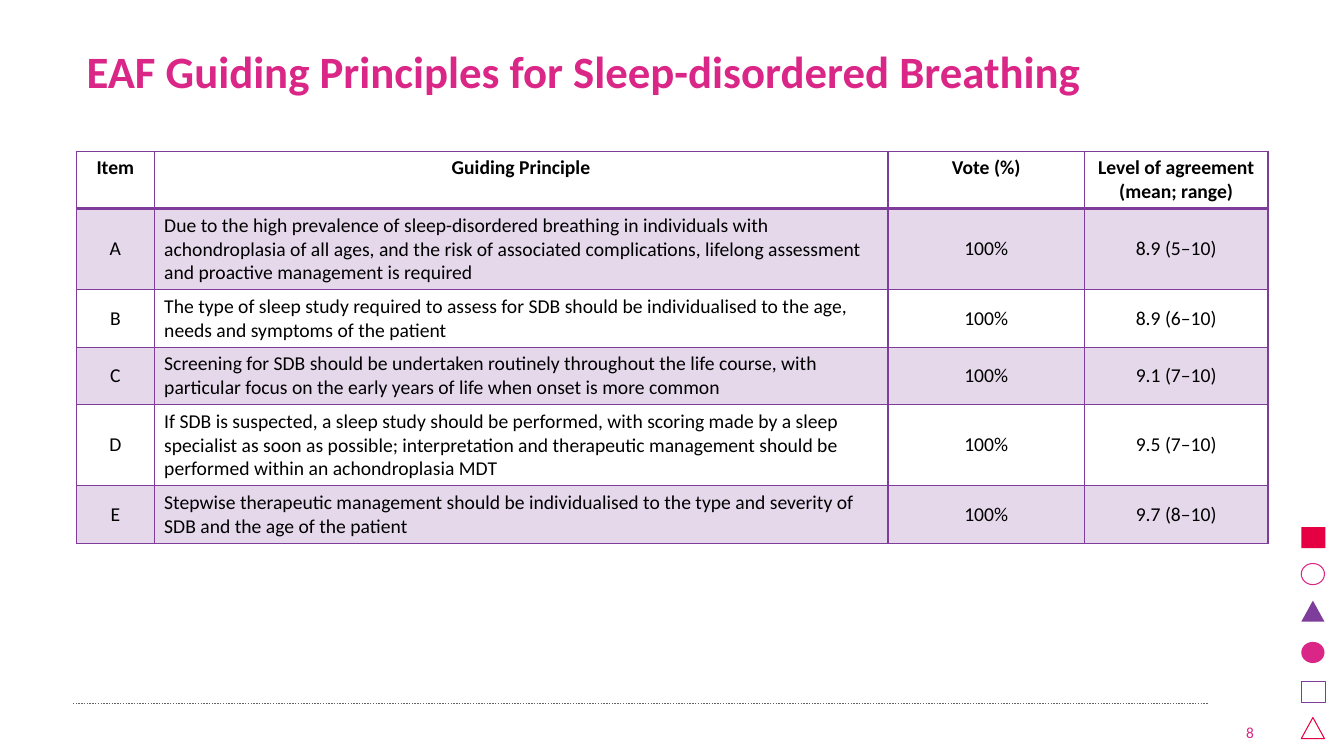
from lxml import etree
from pptx import Presentation
from pptx.dml.color import RGBColor
from pptx.enum.dml import MSO_LINE
from pptx.enum.shapes import MSO_CONNECTOR, MSO_SHAPE
from pptx.enum.text import MSO_ANCHOR, PP_ALIGN
from pptx.oxml.ns import qn
from pptx.util import Pt

LEFT, CENTER, RIGHT = PP_ALIGN.LEFT, PP_ALIGN.CENTER, PP_ALIGN.RIGHT
TOP, MIDDLE, BOTTOM = MSO_ANCHOR.TOP, MSO_ANCHOR.MIDDLE, MSO_ANCHOR.BOTTOM
SQUARE, CIRCLE = MSO_SHAPE.RECTANGLE, MSO_SHAPE.OVAL
TRIANGLE = MSO_SHAPE.ISOSCELES_TRIANGLE
STRAIGHT = MSO_CONNECTOR.STRAIGHT
DOTTED = MSO_LINE.ROUND_DOT

PINK, PURPLE, RED = "DA2686", "7E3C9B", "E50043"
GREY, BLACK = "646464", "000000"

COLUMN_WIDTHS = [55.4, 524.2, 140.4, 131]
ALIGNMENTS = [CENTER, LEFT, CENTER, CENTER]
ROW_HEIGHTS = [41, 58, 41, 41, 58, 41]
HEADER = ["Item", "Guiding Principle", "Vote (%)", "Level of agreement\n(mean; range)"]
PRINCIPLES = [
    ["A", "Due to the high prevalence of sleep-disordered breathing in individuals with "
     "achondroplasia of all ages, and the risk of associated complications, lifelong "
     "assessment and proactive management is required", "100%", "8.9 (5–10)"],
    ["B", "The type of sleep study required to assess for SDB should be individualised "
     "to the age, needs and symptoms of the patient", "100%", "8.9 (6–10)"],
    ["C", "Screening for SDB should be undertaken routinely throughout the life course, "
     "with particular focus on the early years of life when onset is more common",
     "100%", "9.1 (7–10)"],
    ["D", "If SDB is suspected, a sleep study should be performed, with scoring made by "
     "a sleep specialist as soon as possible; interpretation and therapeutic management "
     "should be performed within an achondroplasia MDT", "100%", "9.5 (7–10)"],
    ["E", "Stepwise therapeutic management should be individualised to the type and "
     "severity of SDB and the age of the patient", "100%", "9.7 (8–10)"],
]
ORNAMENTS = [
    (SQUARE, 376.5, RED, True),
    (CIRCLE, 402.5, PINK, False),
    (TRIANGLE, 429, PURPLE, True),
    (CIRCLE, 458.5, PINK, True),
    (SQUARE, 486.5, PURPLE, False),
    (TRIANGLE, 512.5, RED, False),
]


def rgb(value):
    return RGBColor.from_string(value)


class SlideBuilder:
    font = "Calibri"

    def __init__(self, slide):
        self.slide = slide
        self.shapes = slide.shapes

    def set_text(self, frame, text, size, color, bold=False, align=LEFT, spacing=None):
        frame.text = text
        for paragraph in frame.paragraphs:
            paragraph.alignment = align
            if spacing:
                paragraph.line_spacing = spacing
            paragraph.font.name = self.font
            paragraph.font.size = Pt(size)
            paragraph.font.bold = bold
            paragraph.font.color.rgb = rgb(color)

    def text(self, box, text, size, color, anchor, **style):
        frame = self.shapes.add_textbox(*map(Pt, box)).text_frame
        frame.word_wrap = True
        frame.vertical_anchor = anchor
        self.set_text(frame, text, size, color, **style)

    def ornament(self, kind, top, color, filled):
        width = 17.3 if kind == SQUARE else 16.6
        shape = self.shapes.add_shape(kind, Pt(929.5), Pt(top), Pt(width), Pt(15.1))
        shape.shadow.inherit = False
        if filled:
            shape.fill.solid()
            shape.fill.fore_color.rgb = rgb(color)
            shape.line.fill.background()
        else:
            shape.fill.background()
            shape.line.color.rgb = rgb(color)
            shape.line.width = Pt(0.75)

    def dotted_rule(self, left, right, y, color):
        rule = self.shapes.add_connector(STRAIGHT, Pt(left), Pt(y), Pt(right), Pt(y))
        rule.line.color.rgb = rgb(color)
        rule.line.width = Pt(1)
        rule.line.dash_style = DOTTED
        etree.SubElement(rule._element.spPr, qn("a:effectLst"))

    def borders(self, cell, color, bottom_width):
        properties = cell._tc.get_or_add_tcPr()
        for index, (side, width) in enumerate(
                [("L", 1), ("R", 1), ("T", 1), ("B", bottom_width)]):
            border = etree.Element(qn(f"a:ln{side}"), w=str(Pt(width)))
            fill = etree.SubElement(border, qn("a:solidFill"))
            etree.SubElement(fill, qn("a:srgbClr"), val=color)
            properties.insert(index, border)

    def tint(self, cell, color, percent):
        cell.fill.solid()
        cell.fill.fore_color.rgb = rgb(color)
        swatch = cell._tc.tcPr.find(f".//{qn('a:srgbClr')}")
        etree.SubElement(swatch, qn("a:alpha"), val=str(percent * 1000))

    def table(self, left, top, rows):
        table = self.shapes.add_table(
            len(rows), len(COLUMN_WIDTHS), Pt(left), Pt(top),
            Pt(sum(COLUMN_WIDTHS)), Pt(sum(ROW_HEIGHTS))).table
        table.horz_banding = False
        for column, width in zip(table.columns, COLUMN_WIDTHS):
            column.width = Pt(width)
        for r, (row, values) in enumerate(zip(table.rows, rows)):
            row.height = Pt(ROW_HEIGHTS[r])
            header = r == 0
            for c, (cell, value) in enumerate(zip(row.cells, values)):
                cell.vertical_anchor = TOP if header else MIDDLE
                self.set_text(cell.text_frame, value, 14, BLACK, bold=header,
                              align=CENTER if header else ALIGNMENTS[c])
                if r % 2:
                    self.tint(cell, PURPLE, 20)
                else:
                    cell.fill.background()
                self.borders(cell, PURPLE, 2 if header else 1)


def main():
    deck = Presentation()
    deck.slide_width, deck.slide_height = Pt(960), Pt(540)
    page = SlideBuilder(deck.slides.add_slide(deck.slide_layouts[6]))
    for ornament in ORNAMENTS:
        page.ornament(*ornament)
    page.dotted_rule(52, 863, 502.5, GREY)
    page.text((54.7, 12.2, 850.3, 80.6), "EAF Guiding Principles for Sleep-disordered Breathing",
              32, PINK, MIDDLE, bold=True, spacing=0.9)
    page.text((861, 504.7, 41.8, 28.8), "8", 11, PINK, BOTTOM, align=RIGHT)
    page.table(54.7, 108, [HEADER] + PRINCIPLES)
    deck.save("out.pptx")


if __name__ == "__main__":
    main()
